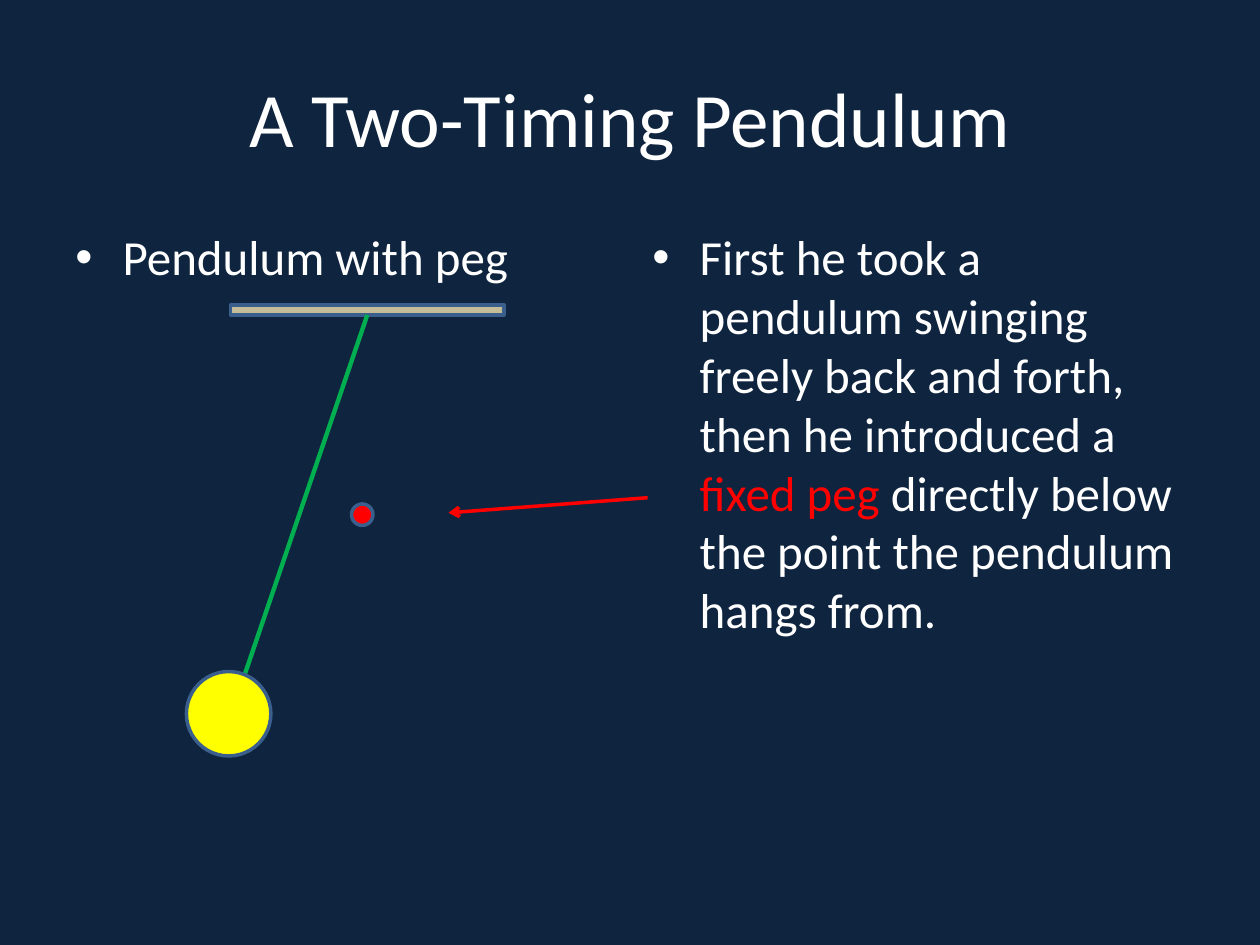
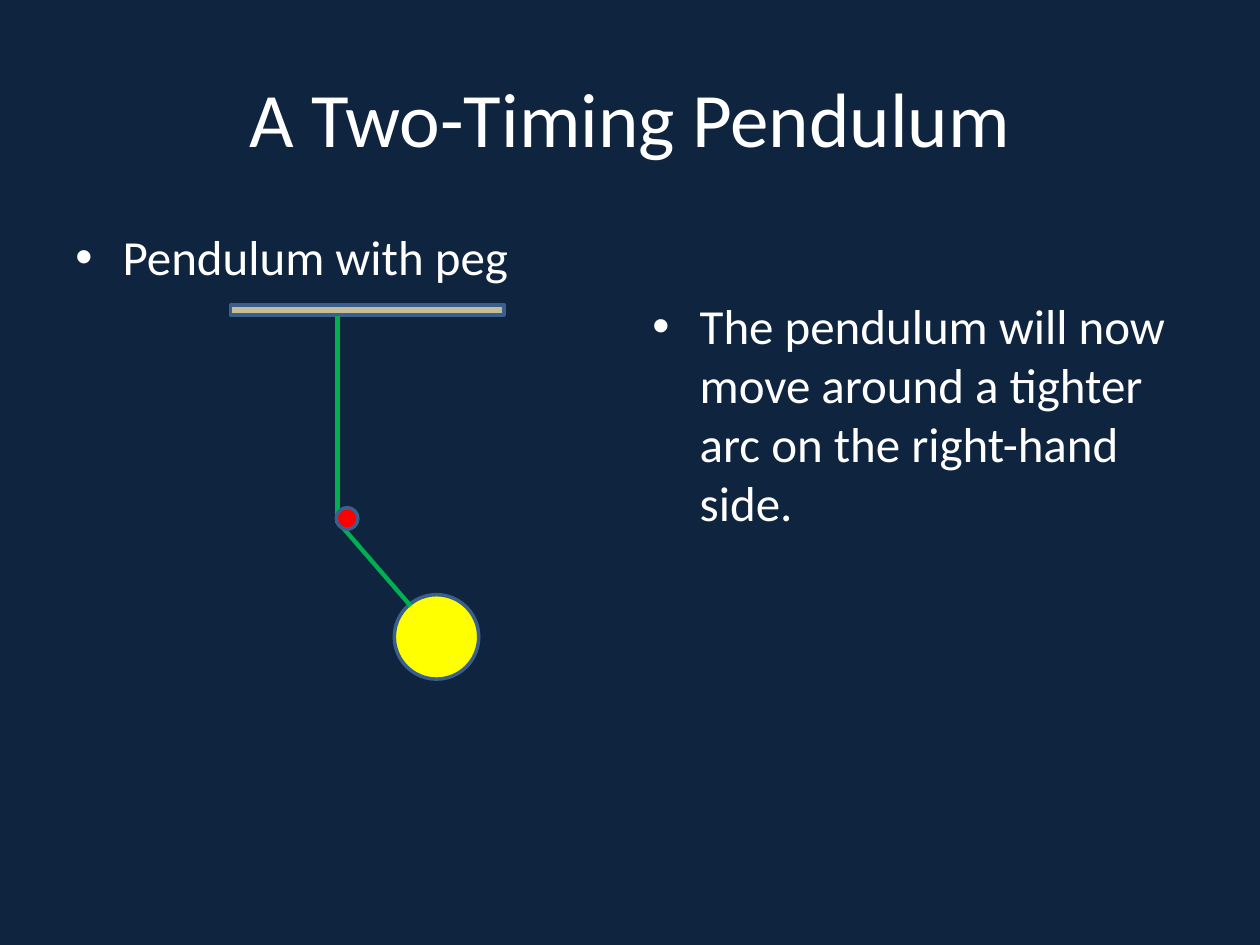
from lxml.etree import SubElement
from pptx import Presentation
from pptx.dml.color import RGBColor
from pptx.enum.shapes import MSO_CONNECTOR, MSO_SHAPE
from pptx.enum.text import MSO_ANCHOR, PP_ALIGN
from pptx.oxml.ns import qn
from pptx.util import Inches, Pt

# Shared look
BACKGROUND, WHITE, RED = "0F243E", "FFFFFF", "FF0000"
CORD, BOB, BAR, OUTLINE = "00B050", "FFFF00", "C4BD97", "3A5F8C"
FONT = "Calibri"
WIDTH, HEIGHT = 10, 7.5
MARGIN, GUTTER = 0.5, 0.16
COLUMN = (WIDTH - 2 * MARGIN - GUTTER) / 2
LEFT_COLUMN, RIGHT_COLUMN = MARGIN, MARGIN + COLUMN + GUTTER
BODY_TOP, BODY_BOTTOM = 1.75, 6.7
TEXT_LINE = 0.55
BAR_BOX = (1.83, 2.42, 2.17, 0.08)
BOB_SIZE, PEG_SIZE = 0.67, 0.17

TITLE = "A Two-Timing Pendulum"
CAPTION = "Pendulum with peg"

# What differs between the slides; each cord is (start, end), None = bar middle
scenes = [
    {
        "runs": [
            ("First he took a pendulum swinging freely back and forth, then he introduced a ", WHITE),
            ("fixed peg ", RED),
            ("directly below the point the pendulum hangs from.", WHITE),
        ],
        "text_top": BODY_TOP,
        "bob": (1.48, 5.33),
        "peg": (2.79, 4),
        "cord": (None, (1.92, 5.42)),
        "front_lines": [((5.14, 3.95), (3.56, 4.07), RED, 2, True)],
    },
    {
        "runs": [("The pendulum will now move around a tighter arc on the right-hand side.", WHITE)],
        "text_top": BODY_TOP + TEXT_LINE,
        "bob": (3.13, 4.72),
        "peg": (2.67, 4.03),
        "cord": ((2.68, 2.51), (2.68, 4.15)),
        "front_lines": [((2.68, 4.14), (3.26, 4.81), CORD, 2.5, False)],
    },
]


def color(hex_string):
    return RGBColor.from_string(hex_string)


def add_text(slide, runs, box, size=28, bullet=True, align=PP_ALIGN.LEFT, anchor=MSO_ANCHOR.TOP):
    text_box = slide.shapes.add_textbox(*map(Inches, box))
    frame = text_box.text_frame
    frame.word_wrap = True
    frame.vertical_anchor = anchor
    paragraph = frame.paragraphs[0]
    paragraph.alignment = align
    if bullet:
        paragraph.space_before = Pt(0.2 * size)
        properties = paragraph._p.get_or_add_pPr()
        properties.set("marL", str(Inches(0.375)))
        properties.set("indent", str(-Inches(0.375)))
        SubElement(properties, qn("a:buFont"), typeface="Arial")
        SubElement(properties, qn("a:buChar"), char="•")
    for text, hex_string in runs:
        run = paragraph.add_run()
        run.text = text
        run.font.name = FONT
        run.font.size = Pt(size)
        run.font.color.rgb = color(hex_string)


presentation = Presentation()
presentation.slide_width, presentation.slide_height = Inches(WIDTH), Inches(HEIGHT)

for scene in scenes:
    slide = presentation.slides.add_slide(presentation.slide_layouts[6])
    slide.background.fill.solid()
    slide.background.fill.fore_color.rgb = color(BACKGROUND)

    # Title and the two text columns
    add_text(slide, [(TITLE, WHITE)], (MARGIN, 0.3, WIDTH - 2 * MARGIN, 1.25), size=44,
             bullet=False, align=PP_ALIGN.CENTER, anchor=MSO_ANCHOR.MIDDLE)
    add_text(slide, [(CAPTION, WHITE)], (LEFT_COLUMN, BODY_TOP, COLUMN, BODY_BOTTOM - BODY_TOP))
    text_top = scene["text_top"]
    add_text(slide, scene["runs"], (RIGHT_COLUMN, text_top, COLUMN, BODY_BOTTOM - text_top))

    # Pendulum parts, from back to front
    cord_start, cord_end = scene["cord"]
    parts = [
        ("shape", MSO_SHAPE.RECTANGLE, BAR_BOX, BAR),
        ("line", cord_start, cord_end, CORD, 2.5, False),
        ("shape", MSO_SHAPE.OVAL, (*scene["bob"], BOB_SIZE, BOB_SIZE), BOB),
        *[("line", *line) for line in scene["front_lines"]],
        ("shape", MSO_SHAPE.OVAL, (*scene["peg"], PEG_SIZE, PEG_SIZE), RED),
    ]
    bar = None
    for kind, *details in parts:
        if kind == "shape":
            preset, box, fill = details
            shape = slide.shapes.add_shape(preset, *map(Inches, box))
            shape.shadow.inherit = False
            shape.fill.solid()
            shape.fill.fore_color.rgb = color(fill)
            shape.line.color.rgb = color(OUTLINE)
            shape.line.width = Pt(2)
            bar = bar or shape
        else:
            start, end, line_color, weight, arrow = details
            connector = slide.shapes.add_connector(
                MSO_CONNECTOR.STRAIGHT, *map(Inches, (*(start or end), *end)))
            if start is None:
                connector.begin_connect(bar, 2)
            connector.line.color.rgb = color(line_color)
            connector.line.width = Pt(weight)
            if arrow:
                SubElement(connector.line._get_or_add_ln(), qn("a:tailEnd"), type="arrow")
            SubElement(connector._element.spPr, qn("a:effectLst"))

presentation.save("out.pptx")
